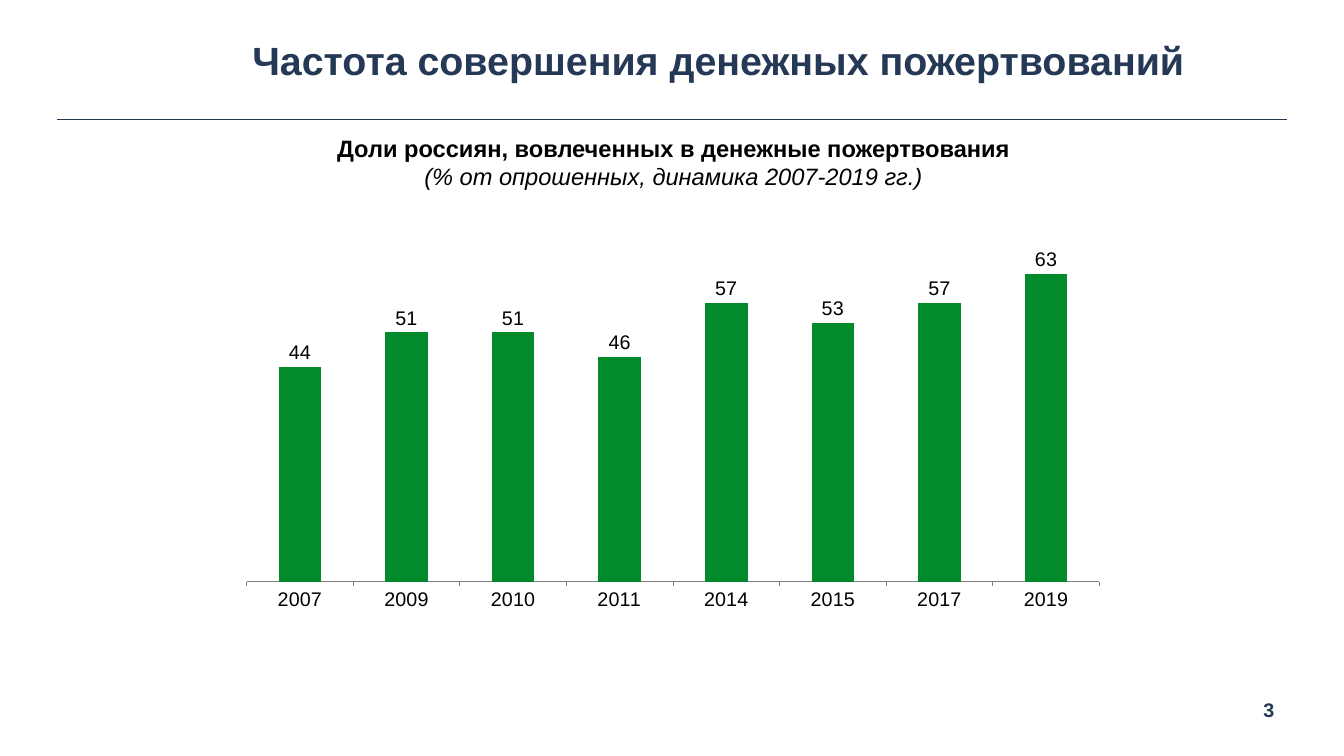
from collections import namedtuple

import pptx
import pptx.chart.data
import pptx.dml.color
import pptx.enum.chart
import pptx.enum.shapes
import pptx.enum.text
import pptx.oxml.ns
import pptx.oxml.xmlchemy
import pptx.util
from pptx.util import Cm

NAVY = pptx.dml.color.RGBColor(0x25, 0x39, 0x57)
BLACK = pptx.dml.color.RGBColor(0, 0, 0)
GREEN = pptx.dml.color.RGBColor(0x02, 0x8A, 0x2B)
GRAY = pptx.dml.color.RGBColor(0x80, 0x80, 0x80)
FONT = "Arial"

# All lengths in centimetres
Box = namedtuple("Box", "left top width height")

TITLE = {"size": 40, "bold": True, "color": NAVY}
SUBTITLE = {"size": 24, "bold": True, "color": BLACK}
SUBTITLE_NOTE = {"size": 24, "italic": True, "color": BLACK}
PAGE_NUMBER = {"size": 20, "bold": True, "color": NAVY}
CHART_TEXT = {"size": 20, "color": BLACK}

SHARES = {"2007": 44, "2009": 51, "2010": 51, "2011": 46,
          "2014": 57, "2015": 53, "2017": 57, "2019": 63}


def set_font(font, style):
    font.name = FONT
    for name, value in style.items():
        if name == "color":
            font.color.rgb = value
        elif name == "size":
            font.size = pptx.util.Pt(value)
        else:
            setattr(font, name, value)


def add_text(page, box, lines, wrap=True):
    """Centre the (text, style) lines in the box, one paragraph each."""
    shape = page.shapes.add_textbox(*map(Cm, box))
    frame = shape.text_frame
    layout = {"word_wrap": wrap,
              "vertical_anchor": pptx.enum.text.MSO_ANCHOR.MIDDLE}
    for side in ("left", "right", "top", "bottom"):
        layout["margin_" + side] = Cm(0.23)
    for name, value in layout.items():
        setattr(frame, name, value)
    for index, (text, style) in enumerate(lines):
        para = frame.add_paragraph() if index else frame.paragraphs[0]
        para.alignment = pptx.enum.text.PP_ALIGN.CENTER
        span = para.add_run()
        span.text = text
        set_font(span.font, style)


def add_header(page, box):
    # Title, indented from the left end of the rule
    title_box = Box(box.left + 3.4, box.top, box.width - 3.51, 2.69)
    add_text(page, title_box,
             [("Частота совершения денежных пожертвований", TITLE)])

    # Rule along the bottom of the header
    bottom = Cm(box.top + box.height)
    rule = page.shapes.add_connector(
        pptx.enum.shapes.MSO_CONNECTOR.STRAIGHT,
        Cm(box.left), bottom, Cm(box.left + box.width), bottom)
    rule.line.color.rgb = NAVY
    rule.line.width = pptx.util.Pt(1)
    properties = rule._element.spPr
    properties.append(pptx.oxml.xmlchemy.OxmlElement("a:effectLst"))


def set_plot_area(chart, fractions):
    """Fix the inner plot area as fractions of the chart frame."""
    plot_area = chart._chartSpace.chart.plotArea
    for old in plot_area.findall(pptx.oxml.ns.qn("c:layout")):
        plot_area.remove(old)
    layout = pptx.oxml.xmlchemy.OxmlElement("c:layout")
    manual = pptx.oxml.xmlchemy.OxmlElement("c:manualLayout")
    settings = [("layoutTarget", "inner"), ("xMode", "edge"), ("yMode", "edge")]
    settings += zip("xywh", map(str, fractions))
    for tag, value in settings:
        setting = pptx.oxml.xmlchemy.OxmlElement("c:" + tag)
        setting.set("val", value)
        manual.append(setting)
    layout.append(manual)
    plot_area.insert(0, layout)


def add_share_chart(page, box):
    enums = pptx.enum.chart
    data = pptx.chart.data.CategoryChartData(number_format="0")
    data.categories = list(SHARES)
    data.add_series("Доля, %", list(SHARES.values()))
    chart = page.shapes.add_chart(
        enums.XL_CHART_TYPE.COLUMN_CLUSTERED, *map(Cm, box), data).chart
    chart.has_title = chart.has_legend = False
    set_font(chart.font, CHART_TEXT)
    set_plot_area(chart, (0.02, 0.07, 0.96, 0.82))

    # Axes
    values = chart.value_axis
    for name, value in {"minimum_scale": 0, "maximum_scale": 70,
                        "has_major_gridlines": False, "visible": False}.items():
        setattr(values, name, value)
    years = chart.category_axis
    years.major_tick_mark = enums.XL_TICK_MARK.OUTSIDE
    years.format.line.color.rgb = GRAY
    years.format.line.width = pptx.util.Pt(0.75)

    # Columns and their labels
    plot = chart.plots[0]
    plot.gap_width = 150
    plot.vary_by_categories = False
    fill = plot.series[0].format.fill
    fill.solid()
    fill.fore_color.rgb = GREEN
    plot.has_data_labels = True
    labels = plot.data_labels
    for name, value in {"show_value": True, "number_format": "0",
                        "number_format_is_linked": False,
                        "position": enums.XL_LABEL_POSITION.OUTSIDE_END}.items():
        setattr(labels, name, value)
    set_font(labels.font, CHART_TEXT)


def add_body(page, box):
    # Chart heading
    add_text(page, Box(box.left, box.top, box.width, 2.46), [
        ("Доли россиян, вовлеченных в денежные пожертвования", SUBTITLE),
        ("(% от опрошенных, динамика 2007-2019 гг.)", SUBTITLE_NOTE)])
    add_share_chart(page, Box(box.left + 4.06, box.top + 2.97,
                              31.83, box.height - 2.97))


def main():
    deck = pptx.Presentation()
    deck.slide_width, deck.slide_height = Cm(48.16), Cm(27.1)
    page = deck.slides.add_slide(deck.slide_layouts[6])
    add_header(page, Box(2.06, 0.81, 44.07, 3.48))
    add_body(page, Box(4.14, 4.57, 39.98, 17.93))
    add_text(page, Box(44.81, 24.79, 1.32, 1.32), [("3", PAGE_NUMBER)], wrap=False)
    deck.save("out.pptx")


if __name__ == "__main__":
    main()
